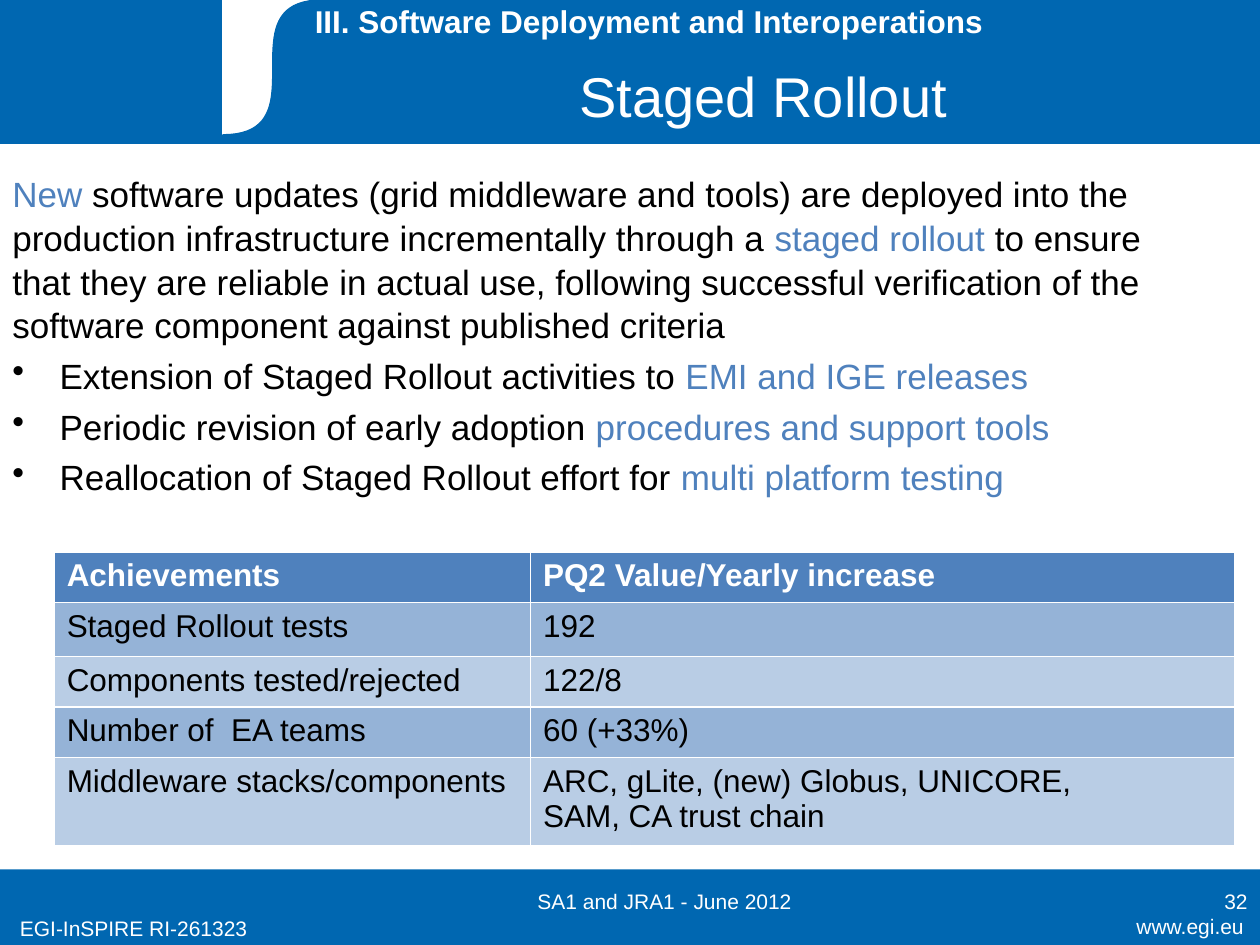
import pptx
import pptx.util
import pptx.dml.color
import pptx.enum.shapes
import pptx.enum.text
import lxml.etree

ALIGN = pptx.enum.text.PP_ALIGN
ANCHOR = pptx.enum.text.MSO_ANCHOR
COLS, ROWS = 100, 75


def rgb(value):
    return pptx.dml.color.RGBColor.from_string(value)


class Deck:
    font = "Arial"
    blue, accent, white, black = "0067B1", "4F81BD", "FFFFFF", "000000"
    bands = ("95B3D7", "B9CDE5")

    def __init__(self):
        self.prs = pptx.Presentation()
        self.prs.slide_width = pptx.util.Inches(10)
        self.prs.slide_height = pptx.util.Inches(7.5)
        self.s = self.prs.slides.add_slide(self.prs.slide_layouts[5])

    def x(self, cols):
        return int(self.prs.slide_width * cols / COLS)

    def y(self, rows):
        return int(self.prs.slide_height * rows / ROWS)

    def box(self, col, row, width, height):
        return self.x(col), self.y(row), self.x(width), self.y(height)

    def style(self, p, size, color, bold=False, align=ALIGN.LEFT):
        p.alignment = align
        for r in p.runs:
            r.font.name = self.font
            r.font.size = pptx.util.Pt(size)
            r.font.bold = bold
            r.font.color.rgb = rgb(color)

    def paint(self, sp, fill, line=None):
        sp.shadow.inherit = False
        sp.fill.solid()
        sp.fill.fore_color.rgb = rgb(fill)
        if line:
            sp.line.color.rgb = rgb(line)
            sp.line.width = pptx.util.Pt(0.75)
        else:
            sp.line.fill.background()

    def rect(self, at, fill, line=None):
        kind = pptx.enum.shapes.MSO_SHAPE.RECTANGLE
        self.paint(self.s.shapes.add_shape(kind, *self.box(*at)), fill, line)

    def swoosh(self, left, right, bottom, bend, steps=40):
        points = [(right, 0), (right, bottom)]
        for i in range(steps + 1):
            t = i / steps
            u = 1 - t
            col = left * (u**3 + 3 * u * t**2) + bend * (3 * u**2 * t + t**3)
            points.append((col, bottom * (u**3 + 3 * u**2 * t)))
        points = [(self.x(col), self.y(row)) for col, row in points]
        builder = self.s.shapes.build_freeform(*points[0])
        builder.add_line_segments(points[1:], close=True)
        self.paint(builder.convert_to_shape(), self.blue, self.blue)

    def title(self, text, at):
        sp = self.s.shapes.title
        sp.left, sp.top, sp.width, sp.height = self.box(*at)
        tf = sp.text_frame
        tf.text = text
        tf.vertical_anchor = ANCHOR.MIDDLE
        self.style(tf.paragraphs[0], 32, self.white, align=ALIGN.CENTER)
        self.s.shapes.element.append(sp.element)

    def label(self, text, at, size=12, bold=False, align=ALIGN.LEFT,
              anchor=ANCHOR.TOP, wrap=True):
        tf = self.s.shapes.add_textbox(*self.box(*at)).text_frame
        tf.word_wrap = wrap
        tf.vertical_anchor = anchor
        tf.text = text
        self.style(tf.paragraphs[0], size, self.white, bold, align)

    def bullet(self, p):
        indent = self.x(3.75)
        pPr = p._p.get_or_add_pPr()
        pPr.set("marL", str(indent))
        pPr.set("indent", str(-indent))
        tag = pptx.oxml.ns.qn("a:buChar")
        lxml.etree.SubElement(pPr, tag).set("char", "•")

    def body(self, intro, bullets, at):
        tf = self.s.shapes.add_textbox(*self.box(*at)).text_frame
        tf.word_wrap = True
        for i, text in enumerate([intro] + bullets):
            p = tf.add_paragraph() if i else tf.paragraphs[0]
            p.line_spacing = 1.04
            if i:
                p.space_before = pptx.util.Pt(4)
                self.bullet(p)
            for j, part in enumerate(text.split("|")):
                if part:
                    r = p.add_run()
                    r.text = part
                    r.font.name = self.font
                    r.font.size = pptx.util.Pt(20)
                    r.font.color.rgb = rgb(self.accent if j % 2 else self.black)

    def table(self, rows, at, widths, heights):
        frame = self.s.shapes.add_table(len(rows), len(widths), *self.box(*at))
        table = frame.table
        for column, width in zip(table.columns, widths):
            column.width = self.x(width)
        for i, (row, height) in enumerate(zip(rows, heights)):
            table.rows[i].height = self.y(height)
            head = i == 0
            for j, text in enumerate(row):
                cell = table.cell(i, j)
                cell.text = text
                cell.fill.solid()
                fill = self.accent if head else self.bands[(i - 1) % 2]
                cell.fill.fore_color.rgb = rgb(fill)
                for p in cell.text_frame.paragraphs:
                    self.style(p, 18, self.white if head else self.black, head)


def main():
    deck = Deck()
    deck.rect((0, 69, 100, 6), deck.blue)
    deck.rect((0, 0, 100, 11.4), deck.blue, deck.blue)
    deck.rect((17.7, 0, 19.7, 10.7), deck.white, deck.white)
    deck.swoosh(left=17.7, right=37.4, bottom=10.7, bend=25.6)
    deck.label("www.egi.eu", (83.9, 72, 15.8, 3.1), align=ALIGN.RIGHT)
    deck.label("EGI-InSPIRE RI-261323", (0.6, 72.2, 25, 3.1))
    deck.title("Staged Rollout", (23.2, 2.8, 74.8, 9.5))
    deck.body(
        "|New| software updates (grid middleware and tools) are deployed into "
        "the production infrastructure incrementally through a |staged rollout "
        "|to ensure that they are reliable in actual use, following successful "
        "verification of the software component against published criteria",
        ["Extension of Staged Rollout activities to |EMI and IGE releases",
         "Periodic revision of early adoption |procedures and support tools",
         "Reallocation of Staged Rollout effort for |multi platform testing"],
        (0, 13.1, 95, 56.7))
    deck.table(
        [("Achievements", "PQ2 Value/Yearly increase"),
         ("Staged Rollout tests", "192"),
         ("Components tested/rejected", "122/8"),
         ("Number of  EA teams", "60 (+33%)"),
         ("Middleware stacks/components",
          "ARC, gLite, (new) Globus, UNICORE,\nSAM, CA trust chain")],
        (4.3, 43.8, 93.7, 22.3), (37.8, 55.9), (3.8, 4.3, 3.8, 3.8, 6.6))
    deck.label("III. Software Deployment and Interoperations",
               (24, -0.3, 55.6, 4), size=18, bold=True, wrap=False)
    deck.label("SA1 and JRA1 - June 2012", (34.2, 69.5, 37.1, 4),
               align=ALIGN.CENTER, anchor=ANCHOR.MIDDLE)
    deck.label("32", (76.8, 69.5, 23.2, 4),
               align=ALIGN.RIGHT, anchor=ANCHOR.MIDDLE)
    deck.prs.save("out.pptx")


if __name__ == "__main__":
    main()
